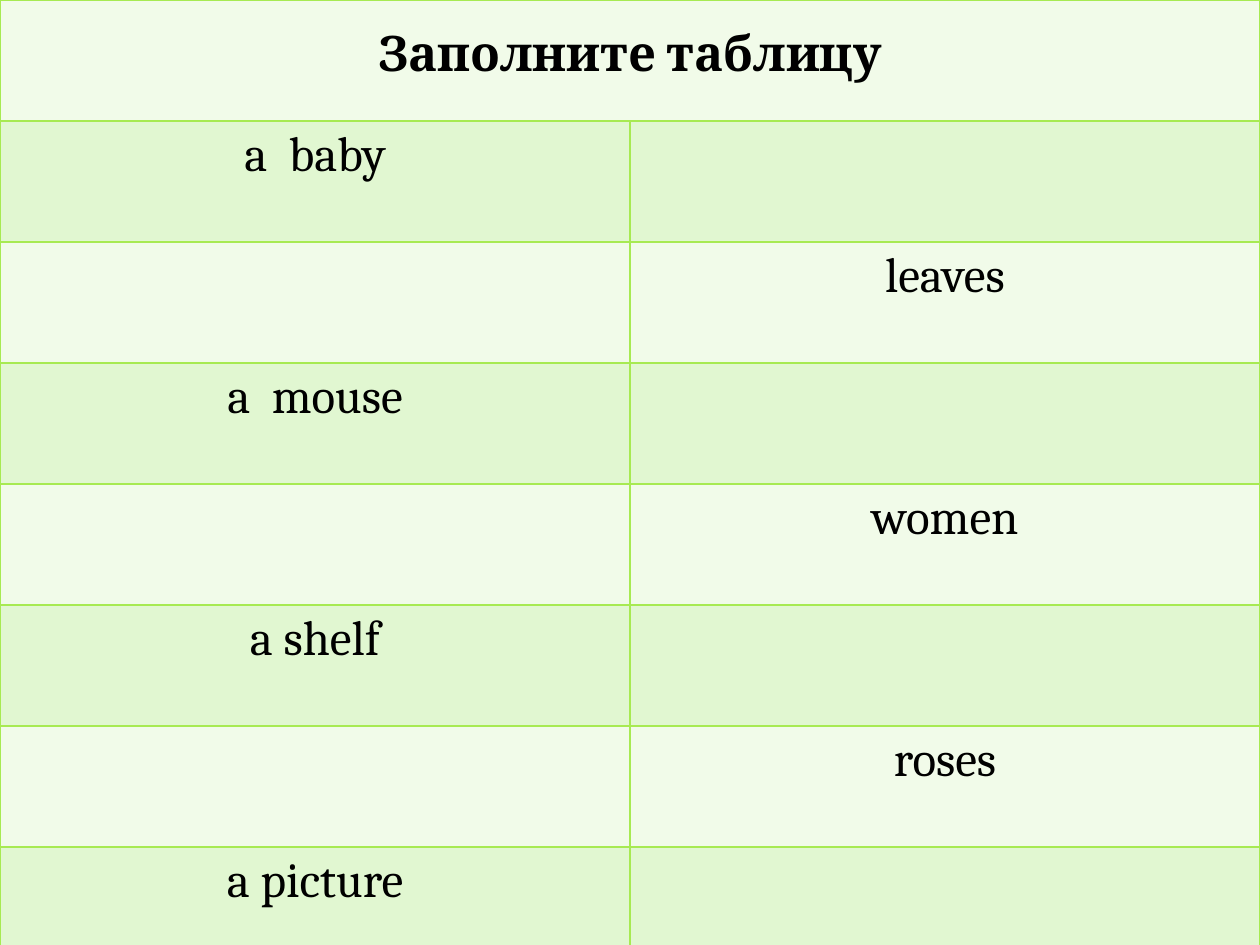
from dataclasses import dataclass

from lxml.etree import SubElement
from pptx import Presentation
from pptx.dml.color import RGBColor
from pptx.enum.text import PP_ALIGN
from pptx.oxml.ns import qn
from pptx.table import Table, _Cell
from pptx.util import Emu, Pt

EMU_PER_PX = 914400 / 126
SLIDE_WIDTH, SLIDE_HEIGHT = 1260, 945
ROW_HEIGHT = 121
TITLE_TOP_MARGIN = 27

BLACK = RGBColor(0x00, 0x00, 0x00)
LIGHT_BAND = RGBColor(0xF1, 0xFB, 0xE9)
DARK_BAND = RGBColor(0xE1, 0xF7, 0xD1)
GRID_GREEN = RGBColor(0xA7, 0xEA, 0x52)


@dataclass
class NounRow:
    singular: str = ""
    plural: str = ""
    bold: bool = False


TITLE = NounRow("Заполните таблицу", bold=True)
NOUNS = [
    NounRow(singular="a  baby"),
    NounRow(plural="leaves"),
    NounRow(singular="a  mouse"),
    NounRow(plural="women"),
    NounRow(singular="a shelf"),
    NounRow(plural="roses"),
    NounRow(singular="a picture"),
]


def px(length: int) -> Emu:
    return Emu(round(length * EMU_PER_PX))


def draw_borders(cell: _Cell) -> None:
    properties = cell._tc.get_or_add_tcPr()
    for side in ("a:lnL", "a:lnR", "a:lnT", "a:lnB"):
        border = SubElement(properties, qn(side), w=str(Pt(1)))
        line_fill = SubElement(border, qn("a:solidFill"))
        SubElement(line_fill, qn("a:srgbClr"), val=str(GRID_GREEN))


def write_word(cell: _Cell, word: str, bold: bool) -> None:
    paragraph = cell.text_frame.paragraphs[0]
    paragraph.alignment = PP_ALIGN.CENTER
    run = paragraph.add_run()
    run.text = word
    run.font.color.rgb = BLACK
    font_format = {"name": "Cambria", "size": Pt(28), "bold": bold}
    for attribute, value in font_format.items():
        setattr(run.font, attribute, value)


def draw_row(table: Table, index: int, row: NounRow) -> None:
    table.rows[index].height = px(ROW_HEIGHT)
    for column, word in enumerate((row.singular, row.plural)):
        cell = table.cell(index, column)
        draw_borders(cell)
        cell.fill.solid()
        cell.fill.fore_color.rgb = DARK_BAND if index % 2 else LIGHT_BAND
        if word:
            write_word(cell, word, row.bold)


def main() -> None:
    presentation = Presentation()
    presentation.slide_width = px(SLIDE_WIDTH)
    presentation.slide_height = px(SLIDE_HEIGHT)
    slide = presentation.slides.add_slide(presentation.slide_layouts[6])

    # Two-column table of singular and plural nouns
    rows = [TITLE, *NOUNS]
    noun_table = slide.shapes.add_table(
        len(rows), 2, 0, 0, px(SLIDE_WIDTH), px(ROW_HEIGHT * len(rows))
    ).table
    for flag, value in {"first_row": False, "horz_banding": False}.items():
        setattr(noun_table, flag, value)
    for index, row in enumerate(rows):
        draw_row(noun_table, index, row)

    # Title across both columns
    title_cell = noun_table.cell(0, 0)
    title_cell.merge(noun_table.cell(0, 1))
    title_cell.margin_top = px(TITLE_TOP_MARGIN)

    presentation.save("out.pptx")


if __name__ == "__main__":
    main()
